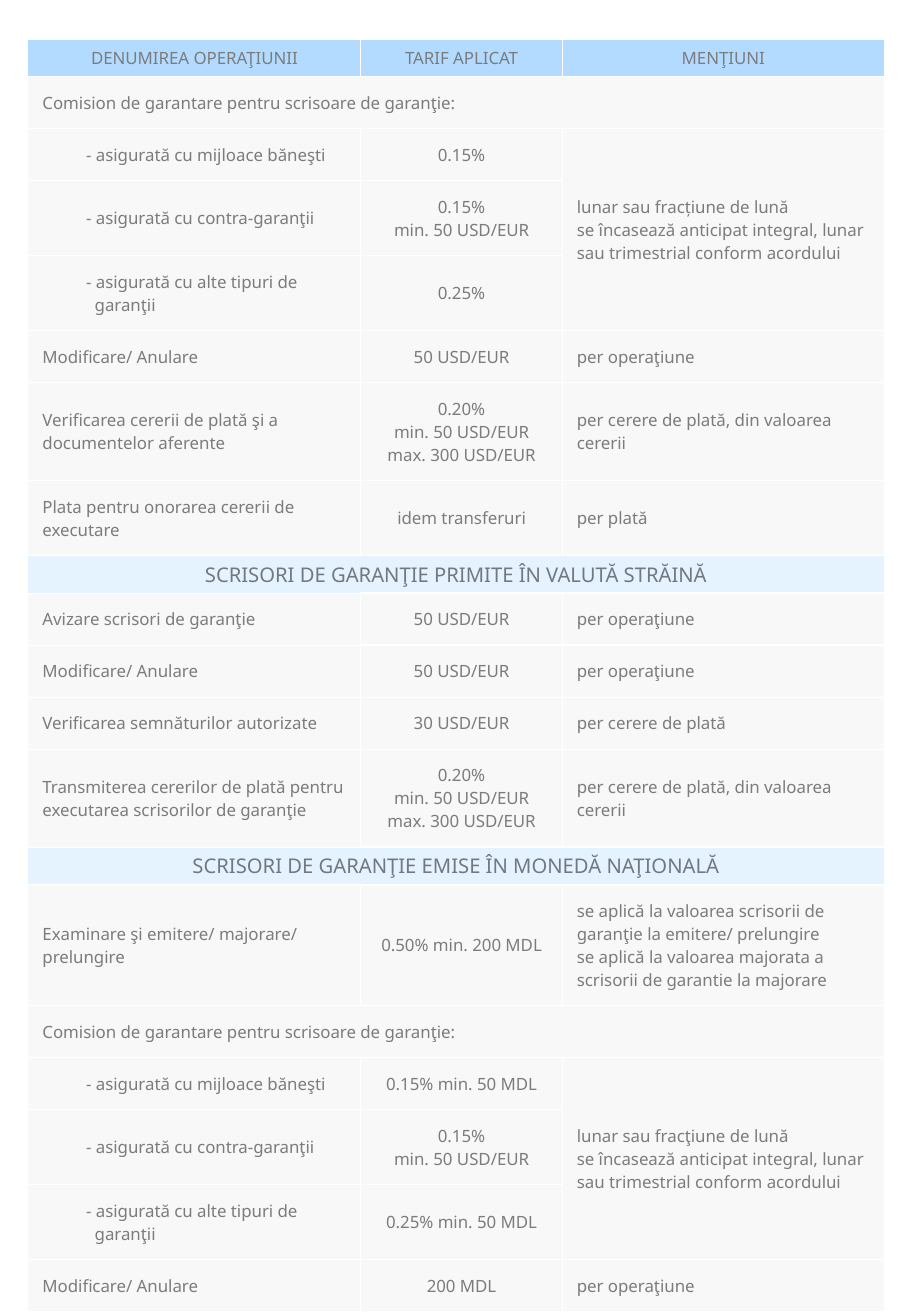
from lxml.etree import SubElement
from pptx import Presentation
from pptx.dml.color import RGBColor
from pptx.enum.text import MSO_ANCHOR, PP_ALIGN
from pptx.oxml import parse_xml
from pptx.oxml.ns import nsdecls, qn
from pptx.util import Inches, Pt

BLUE = RGBColor(0x00, 0x88, 0xFF)
PALE_GRAY = RGBColor(0xF2, 0xF2, 0xF2)
TEXT_GRAY = RGBColor(0x7C, 0x7C, 0x7C)
BLACK = RGBColor(0x00, 0x00, 0x00)
WHITE = RGBColor(0xFF, 0xFF, 0xFF)
FONT = "Noto Sans"

COLUMN_WIDTHS = (2.74, 1.66, 2.65)
BAND_HEIGHT = 0.31
LINE_HEIGHT = 0.19
ROW_PADDING = 0.23
ITEM_INDENT = 0.36
CONTINUATION_INDENT = 0.43

# Kind of row: (fill, fill opacity, cell margin, text size, text colour, text opacity)
STYLES = {
    "header": (BLUE, 30, 0.05, 10, TEXT_GRAY, 100),
    "section": (BLUE, 10, 0.04, 12, BLACK, 50),
    "body": (PALE_GRAY, 50, 0.12, 10, TEXT_GRAY, 100),
}

GUARANTEE_FEE = "Comision de garantare pentru scrisoare de garanţie:"
CASH = "- asigurată cu mijloace băneşti"
COUNTER_GUARANTEE = "- asigurată cu contra-garanţii"
OTHER_GUARANTEE = "- asigurată cu alte tipuri de\ngaranţii"
CHANGE = "Modificare/ Anulare"
PER_OPERATION = "per operaţiune"
PER_CLAIM_VALUE = "per cerere de plată, din valoarea cererii"
CLAIM_RATE = "0.20%\nmin. 50 USD/EUR\nmax. 300 USD/EUR"
COUNTER_RATE = "0.15%\nmin. 50 USD/EUR"
COLLECTED = "\nse încasează anticipat integral, lunar sau trimestrial conform acordului"

# (kind, text lines in the row, cell texts); a single text spans the row,
# and None continues the cell above.
ROWS = (
    ("header", 1, ("DENUMIREA OPERAŢIUNII", "TARIF APLICAT", "MENŢIUNI")),
    ("body", 1, (GUARANTEE_FEE,)),
    ("body", 1, (CASH, "0.15%", "lunar sau fracțiune de lună" + COLLECTED)),
    ("body", 2, (COUNTER_GUARANTEE, COUNTER_RATE, None)),
    ("body", 2, (OTHER_GUARANTEE, "0.25%", None)),
    ("body", 1, (CHANGE, "50 USD/EUR", PER_OPERATION)),
    ("body", 3, ("Verificarea cererii de plată şi a documentelor aferente",
                 CLAIM_RATE, PER_CLAIM_VALUE)),
    ("body", 2, ("Plata pentru onorarea cererii de executare",
                 "idem transferuri", "per plată")),
    ("section", 1, ("SCRISORI DE GARANŢIE PRIMITE ÎN VALUTĂ STRĂINĂ",)),
    ("body", 1, ("Avizare scrisori de garanţie", "50 USD/EUR", PER_OPERATION)),
    ("body", 1, (CHANGE, "50 USD/EUR", PER_OPERATION)),
    ("body", 1, ("Verificarea semnăturilor autorizate", "30 USD/EUR",
                 "per cerere de plată")),
    ("body", 3, ("Transmiterea cererilor de plată pentru executarea "
                 "scrisorilor de garanţie", CLAIM_RATE, PER_CLAIM_VALUE)),
    ("section", 1, ("SCRISORI DE GARANŢIE EMISE ÎN MONEDĂ NAŢIONALĂ",)),
    ("body", 4, ("Examinare şi emitere/ majorare/ prelungire", "0.50% min. 200 MDL",
                 "se aplică la valoarea scrisorii de garanţie la emitere/ prelungire\n"
                 "se aplică la valoarea majorata a scrisorii de garantie la majorare")),
    ("body", 1, (GUARANTEE_FEE,)),
    ("body", 1, (CASH, "0.15% min. 50 MDL", "lunar sau fracţiune de lună" + COLLECTED)),
    ("body", 2, (COUNTER_GUARANTEE, COUNTER_RATE, None)),
    ("body", 2, (OTHER_GUARANTEE, "0.25% min. 50 MDL", None)),
    ("body", 1, (CHANGE, "200 MDL", PER_OPERATION)),
)


def set_opacity(parent, percent):
    """Make the solid colour inside the given element partly transparent."""
    color = next(parent.iter(qn("a:srgbClr")))
    SubElement(color, qn("a:alpha")).set("val", str(percent * 1000))


def format_cell(cell, kind, column):
    fill, opacity, margin = STYLES[kind][:3]
    cell.margin_left = cell.margin_right = Inches(margin)
    cell.margin_top = cell.margin_bottom = Inches(margin)
    cell.vertical_anchor = MSO_ANCHOR.MIDDLE
    cell.fill.solid()
    cell.fill.fore_color.rgb = fill
    properties = cell._tc.tcPr
    set_opacity(properties, opacity)
    width = Pt(1) if kind == "body" and column else Pt(0.75)
    sides = "LRB" if kind == "header" else "LRTB"
    for position, side in enumerate(sides):
        properties.insert(position, parse_xml(
            f'<a:ln{side} {nsdecls("a")} w="{width}"><a:solidFill>'
            f'<a:srgbClr val="{WHITE}"/></a:solidFill></a:ln{side}>'))


def write_cell(cell, text, kind, centered):
    size, color, opacity = STYLES[kind][3:]
    frame = cell.text_frame
    is_item = text.startswith("- ")
    for index, line in enumerate(text.split("\n")):
        paragraph = frame.add_paragraph() if index else frame.paragraphs[0]
        paragraph.alignment = PP_ALIGN.CENTER if centered else PP_ALIGN.LEFT
        if is_item:
            indent = CONTINUATION_INDENT if index else ITEM_INDENT
            paragraph._p.get_or_add_pPr().set("marL", str(Inches(indent)))
        run = paragraph.add_run()
        run.text = line
        run.font.name = FONT
        run.font.size = Pt(size)
        run.font.color.rgb = color
        if opacity < 100:
            set_opacity(run._r, opacity)


def row_height(kind, lines):
    return ROW_PADDING + LINE_HEIGHT * lines if kind == "body" else BAND_HEIGHT


def add_tariff_table(slide, left, top):
    heights = [row_height(kind, lines) for kind, lines, _ in ROWS]
    table = slide.shapes.add_table(
        len(ROWS), len(COLUMN_WIDTHS), Inches(left), Inches(top),
        Inches(sum(COLUMN_WIDTHS)), Inches(sum(heights))).table
    table.first_row = table.horz_banding = False
    for column, width in zip(table.columns, COLUMN_WIDTHS):
        column.width = Inches(width)

    last_column = len(COLUMN_WIDTHS) - 1
    merge_starts = {}
    for row, (kind, _, texts) in enumerate(ROWS):
        table.rows[row].height = Inches(heights[row])
        for column in range(len(COLUMN_WIDTHS)):
            format_cell(table.cell(row, column), kind, column)
        for column, text in enumerate(texts):
            if text is None:
                continue
            centered = kind != "body" or column == 1
            write_cell(table.cell(row, column), text, kind, centered)
        if len(texts) == 1:
            table.cell(row, 0).merge(table.cell(row, last_column))
        elif texts[-1] is None:
            merge_starts[start] = row
        else:
            start = row
    for start, end in merge_starts.items():
        table.cell(start, last_column).merge(table.cell(end, last_column))


def main():
    presentation = Presentation()
    presentation.slide_width = Inches(7.5)
    presentation.slide_height = Inches(10.83)
    slide = presentation.slides.add_slide(presentation.slide_layouts[6])
    add_tariff_table(slide, 0.23, 0.32)
    presentation.save("out.pptx")


if __name__ == "__main__":
    main()
